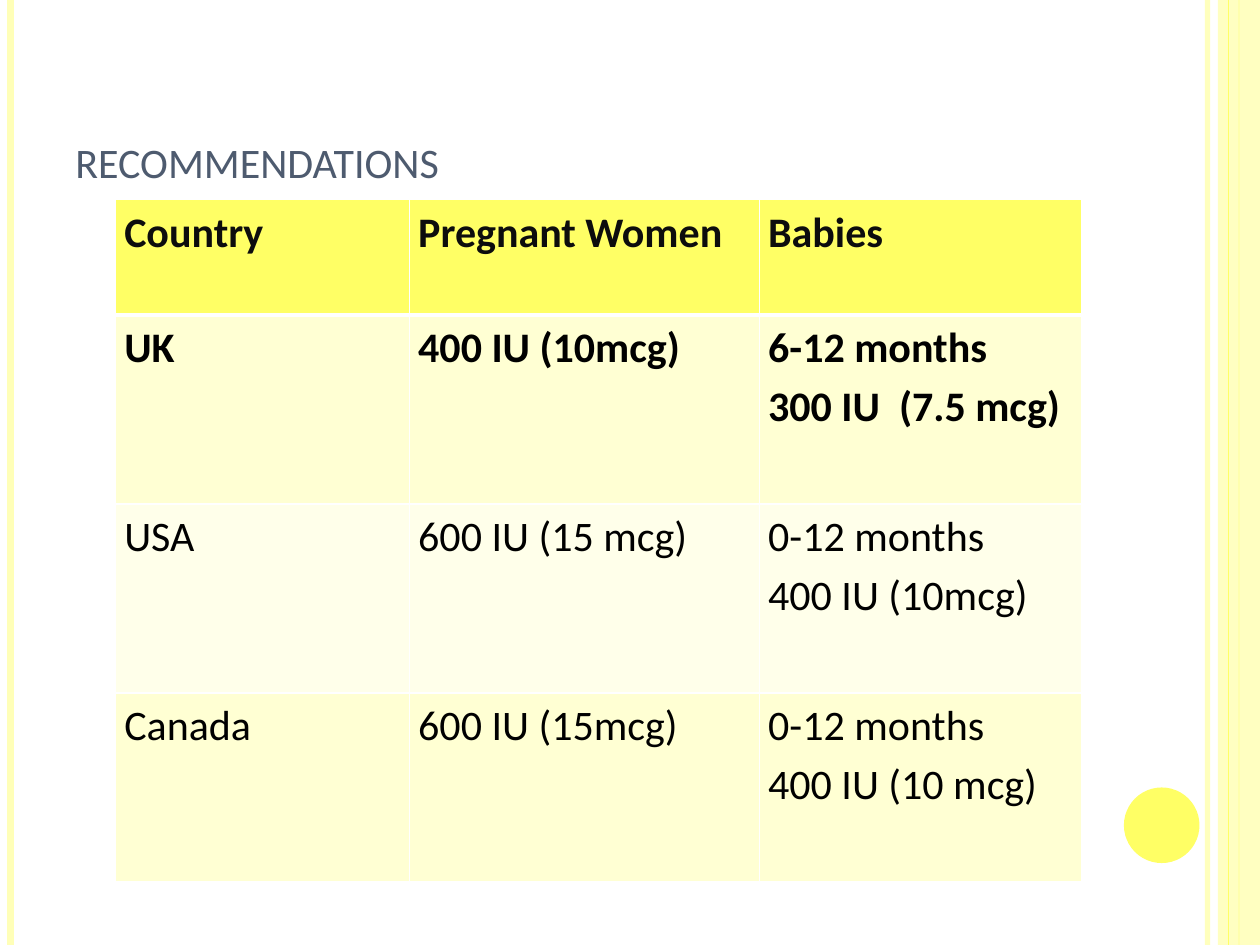
from lxml import etree
from pptx import Presentation
from pptx import util as u
from pptx.dml.color import RGBColor
from pptx.enum import shapes, text
from pptx.oxml.ns import qn

Pt = u.Pt
PALE, LEMON, WHITE = "FFFFB8", "FFFF65", "FFFFFF"
ROWS = [
    ("Country", "Pregnant Women", "Babies"),
    ("UK", "400 IU (10mcg)", "6-12 months\n300 IU  (7.5 mcg)"),
    ("USA", "600 IU (15 mcg)", "0-12 months\n400 IU (10mcg)"),
    ("Canada", "600 IU (15mcg)", "0-12 months\n400 IU (10 mcg)"),
]
FILLS = [LEMON, "FFFFD3", "FFFFEA", "FFFFD3"]


def rgb(code):
    """Turn a hex string into a colour."""
    return RGBColor.from_string(code)


def fade(part, share):
    """Give the colour inside part an opacity in percent."""
    tint = next(part.iter(qn("a:srgbClr")))
    etree.SubElement(tint, qn("a:alpha"), val=str(share * 1000))


def rule(slide, x, top, high, tone, width, share=100):
    """Draw a vertical line."""
    line = slide.shapes.add_connector(
        shapes.MSO_CONNECTOR.STRAIGHT, Pt(x), Pt(top), Pt(x), Pt(top + high))
    line.line.color.rgb = rgb(tone)
    line.line.width = Pt(width)
    props = line._element.spPr
    if share < 100:
        fade(props, share)
    etree.SubElement(props, qn("a:effectLst"))


def solid(slide, kind, box, tone):
    """Draw a filled shape without outline."""
    shape = slide.shapes.add_shape(kind, *map(Pt, box))
    shape.shadow.inherit = False
    shape.fill.solid()
    shape.fill.fore_color.rgb = rgb(tone)
    shape.line.fill.background()
    return shape


def frame(slide, box):
    """Draw the edge stripes and the dot."""
    left, top, wide, high = box
    right = left + wide
    rule(slide, right - 30, top, high, PALE, 3, 93)
    rule(slide, left + 6, top, high, PALE, 4.5)
    rule(slide, right - 12, top, high, LEMON, 1.5)
    band = solid(slide, shapes.MSO_SHAPE.RECTANGLE,
                 (right - 24, top, 24, high), PALE)
    fade(band._element.spPr, 87)
    rule(slide, right - 18, top, high, LEMON, 0.75)
    solid(slide, shapes.MSO_SHAPE.OVAL,
          (right - 77.76, top + 450, 43.2, 43.2), LEMON)


def title(slide, box, words):
    """Write the small-caps heading at the foot of its box."""
    body = slide.shapes.add_textbox(*map(Pt, box)).text_frame
    body.word_wrap = True
    body.vertical_anchor = text.MSO_ANCHOR.BOTTOM
    para = body.paragraphs[0]
    run = para.add_run()
    run.text = words
    run.font.name, run.font.size = "Calibri", Pt(30)
    run.font.color.rgb = rgb("4E5B6F")
    run.font._element.set("cap", "small")


def edge(cell, side, width):
    """Add a white border to one side of a cell."""
    line = etree.SubElement(cell._tc.get_or_add_tcPr(), qn("a:ln" + side),
                            w=str(Pt(width)))
    fill = etree.SubElement(line, qn("a:solidFill"))
    etree.SubElement(fill, qn("a:srgbClr"), val=WHITE)


def fill(cell, words, row):
    """Style one cell and write its text."""
    for side in "LRTB":
        thick = (row == 0 and side == "B") or (row == 1 and side == "T")
        edge(cell, side, 3 if thick else 1)
    cell.fill.solid()
    cell.fill.fore_color.rgb = rgb(FILLS[row])
    cell.margin_left = cell.margin_right = Pt(5.04)
    cell.margin_top = cell.margin_bottom = 0
    cell.text = words
    for para in cell.text_frame.paragraphs:
        para.line_spacing = 1.15
        font = para.font
        font.name, font.size, font.bold = "Calibri", Pt(24), row < 2
        font.color.rgb = rgb("000000" if row else "0D0D0D")


def table(slide, box):
    """Build the table of doses by country."""
    grid = slide.shapes.add_table(
        len(ROWS), len(ROWS[0]), *map(Pt, box)).table
    for col, wide in zip(grid.columns, (168, 200, 184)):
        col.width = Pt(wide)
    body = 108
    for r, row in enumerate(ROWS):
        grid.rows[r].height = Pt(body if r else box[3] - 3 * body)
        for c, words in enumerate(row):
            fill(grid.cell(r, c), words, r)


def main():
    """Build and save the slide."""
    deck = Presentation()
    deck.slide_width, deck.slide_height = Pt(720), Pt(540)
    slide = deck.slides.add_slide(deck.slide_layouts[6])
    frame(slide, (0, 0, 720, 540))
    title(slide, (36, 21.6, 588, 90), "recommendations")
    table(slide, (66, 114, 552, 390))
    deck.save("out.pptx")


if __name__ == "__main__":
    main()
